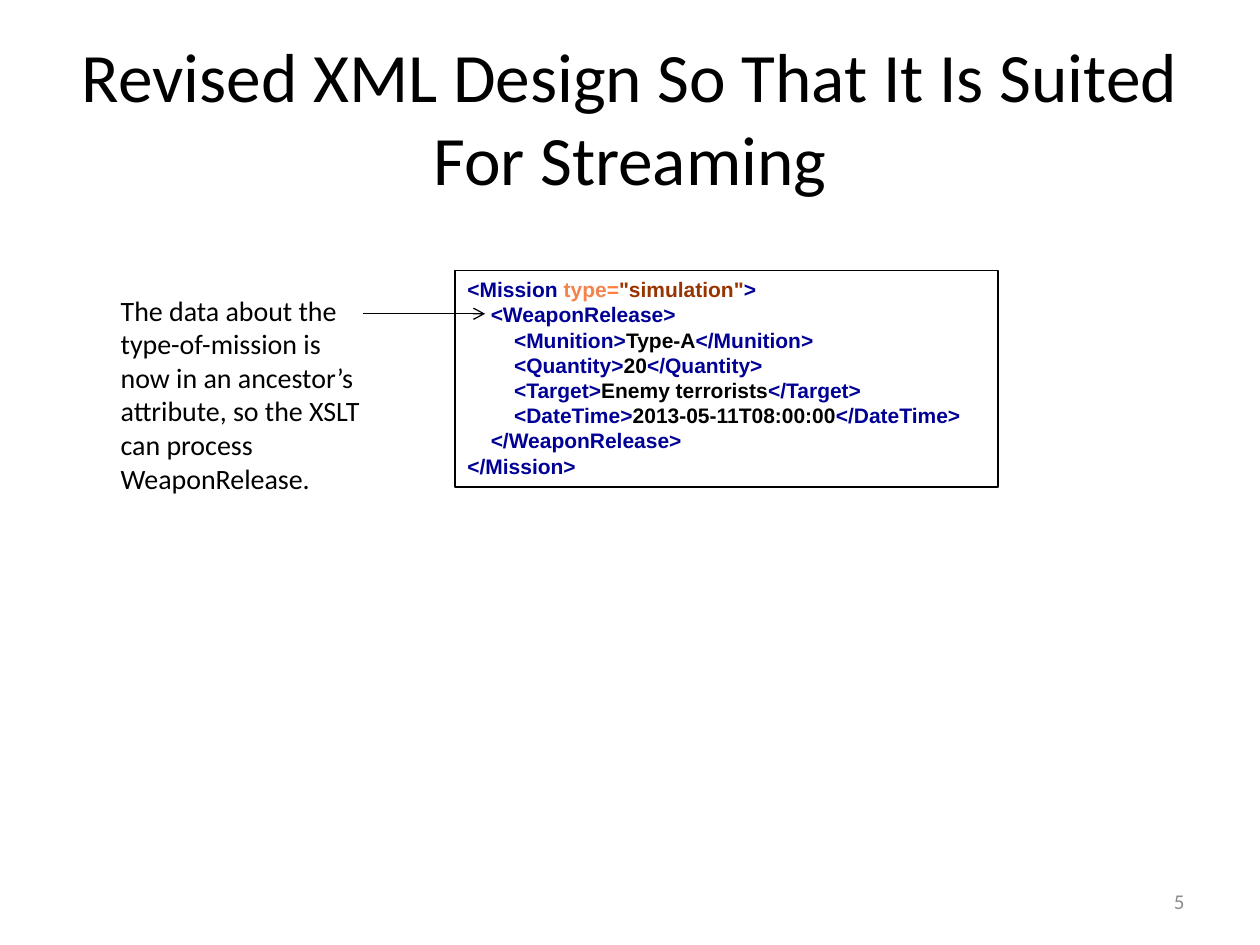
from lxml import etree
from pptx import Presentation
from pptx.dml.color import RGBColor
from pptx.enum import shapes, text
from pptx.oxml import ns
from pptx.util import Pt

BLACK = RGBColor(0x00, 0x00, 0x00)
GREY = RGBColor(0x8C, 0x8C, 0x8C)
TAG = RGBColor(0x00, 0x00, 0x96)
ATTRIBUTE = RGBColor(0xF5, 0x84, 0x4C)
EQUALS = RGBColor(0xFF, 0x80, 0x40)
VALUE = RGBColor(0x99, 0x33, 0x00)

INDENT = 13.34
FIELDS = [
    ("Munition", "Type-A"),
    ("Quantity", "20"),
    ("Target", "Enemy terrorists"),
    ("DateTime", "2013-05-11T08:00:00"),
]


def add_run(p, words, size, color=BLACK, font="Calibri", bold=False):
    r = p.add_run()
    r.text = words
    r.font.size = Pt(size)
    r.font.name = font
    r.font.bold = bold
    r.font.color.rgb = color


def add_text(s, box, words, size, color=BLACK, align=text.PP_ALIGN.LEFT,
             anchor=text.MSO_ANCHOR.TOP, after=0):
    tf = s.shapes.add_textbox(*map(Pt, box)).text_frame
    tf.word_wrap = True
    tf.vertical_anchor = anchor
    p = tf.paragraphs[0]
    p.alignment = align
    p.space_after = Pt(after)
    add_run(p, words, size, color)


def code_lines():
    """Return (indent level, [(words, colour), ...]) for each line of XML."""
    mission = [("<Mission", TAG), (" type", ATTRIBUTE), ("=", EQUALS),
               ('"simulation"', VALUE), (">", TAG)]
    fields = [(2, [(f"<{name}>", TAG), (value, BLACK), (f"</{name}>", TAG)])
              for name, value in FIELDS]
    return [(0, mission), (1, [("<WeaponRelease>", TAG)]), *fields,
            (1, [("</WeaponRelease>", TAG)]), (0, [("</Mission>", TAG)])]


def add_code_box(s, box):
    sp = s.shapes.add_shape(shapes.MSO_SHAPE.RECTANGLE, *map(Pt, box))
    sp.shadow.inherit = False
    sp.fill.background()
    sp.line.color.rgb = BLACK
    sp.line.width = Pt(0.75)
    tf = sp.text_frame
    tf.word_wrap = True
    tf.vertical_anchor = text.MSO_ANCHOR.TOP
    for i, (level, parts) in enumerate(code_lines()):
        p = tf.add_paragraph() if i else tf.paragraphs[0]
        p.alignment = text.PP_ALIGN.LEFT
        p.line_spacing = Pt(14.4)
        p._p.get_or_add_pPr().set("marL", str(Pt(level * INDENT)))
        for words, color in parts:
            add_run(p, words, 12, color, "Arial", True)


def add_arrow(s, x1, x2, y):
    c = s.shapes.add_connector(shapes.MSO_CONNECTOR.STRAIGHT,
                               Pt(x1), Pt(y), Pt(x2), Pt(y))
    c.line.color.rgb = BLACK
    c.line.width = Pt(0.75)
    etree.SubElement(c.line._get_or_add_ln(), ns.qn("a:tailEnd"), type="arrow")
    etree.SubElement(c._element.spPr, ns.qn("a:effectLst"))


def main():
    prs = Presentation()
    prs.slide_width, prs.slide_height = Pt(720), Pt(540)
    s = prs.slides.add_slide(prs.slide_layouts[6])
    middle = text.MSO_ANCHOR.MIDDLE
    add_text(s, (36, 21.6, 648, 90),
             "Revised XML Design So That It Is Suited For Streaming", 39.6,
             align=text.PP_ALIGN.CENTER, anchor=middle)
    add_code_box(s, (260, 154.6, 310.3, 123.8))
    add_arrow(s, 207.2, 277.2, 179.3)
    add_text(s, (61.9, 164, 151.2, 143.3),
             "The data about the type-of-mission is now in an ancestor’s "
             "attribute, so the XSLT can process WeaponRelease.", 16, after=6)
    add_text(s, (516.2, 500.4, 167.8, 28.8), "5", 12, GREY,
             text.PP_ALIGN.RIGHT, middle)
    prs.save("out.pptx")


if __name__ == "__main__":
    main()
